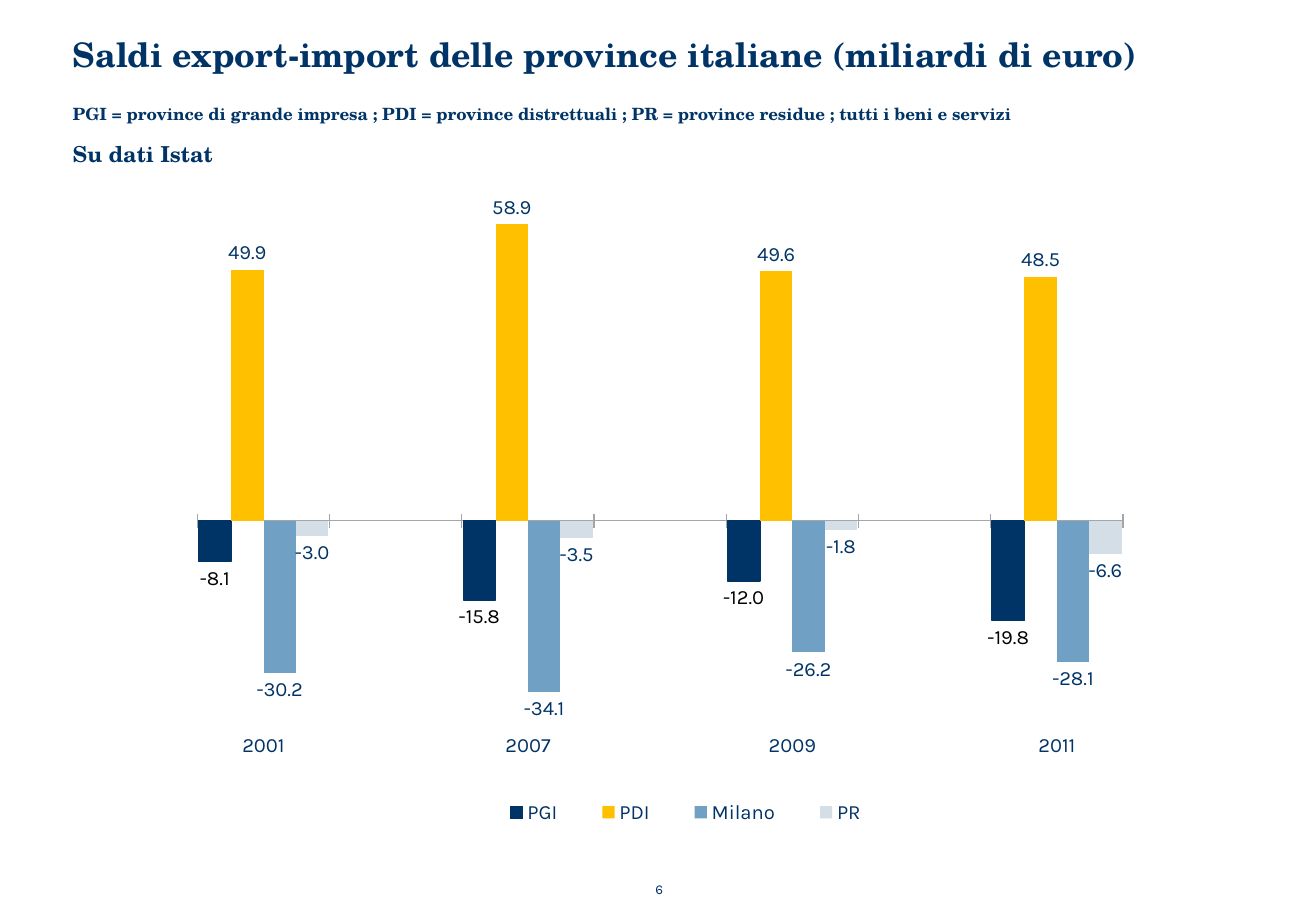
from lxml.etree import SubElement
from pptx import Presentation
from pptx.chart.data import CategoryChartData
from pptx.dml.color import RGBColor
from pptx.enum.chart import (XL_CHART_TYPE, XL_LABEL_POSITION, XL_LEGEND_POSITION,
                             XL_TICK_LABEL_POSITION, XL_TICK_MARK)
from pptx.enum.text import MSO_ANCHOR, MSO_AUTO_SIZE, PP_ALIGN
from pptx.oxml.ns import qn
from pptx.util import Inches, Pt

NAVY = RGBColor(0x00, 0x33, 0x66)
GOLD = RGBColor(0xFF, 0xC0, 0x00)
BLUE = RGBColor(0x70, 0xA0, 0xC3)
PALE = RGBColor(0xD3, 0xDE, 0xE6)
GREY = RGBColor(0xA6, 0xA6, 0xA6)
BLACK = RGBColor(0x00, 0x00, 0x00)
SERIF = "TeX Gyre Schola"
SANS = "Karla"

YEARS = ["2001", "2007", "2009", "2011"]
BALANCES = [
    ("PGI", [-8.1, -15.8, -12.0, -19.8], NAVY, BLACK),
    ("PDI", [49.9, 58.9, 49.6, 48.5], GOLD, NAVY),
    ("Milano", [-30.2, -34.1, -26.2, -28.1], BLUE, NAVY),
    ("PR", [-3.0, -3.5, -1.8, -6.6], PALE, NAVY),
]


def set_font(font, name, size, color=NAVY, bold=False):
    font.name = name
    font.size = Pt(size)
    font.color.rgb = color
    font.bold = bold


def write_line(box, place, text, name, size, bold=True, anchor=MSO_ANCHOR.TOP,
               align=PP_ALIGN.LEFT, wrap=True):
    """Place a box and fill it with one formatted paragraph."""
    box.left, box.top, box.width, box.height = (Inches(n) for n in place)
    frame = box.text_frame
    frame.text = text
    frame.word_wrap = wrap
    frame.auto_size = MSO_AUTO_SIZE.NONE
    frame.vertical_anchor = anchor
    frame.margin_left = frame.margin_right = Inches(0.1)
    frame.margin_top = frame.margin_bottom = Inches(0.05)
    paragraph = frame.paragraphs[0]
    paragraph.alignment = align
    set_font(paragraph.font, name, size, bold=bold)


def add_line(slide, place, *text_and_font, **options):
    box = slide.shapes.add_textbox(*(Inches(n) for n in place))
    write_line(box, place, *text_and_font, **options)


def spaced(items, gap):
    """Put a gap between neighbouring items, so that the years stand apart."""
    return [entry for item in items for entry in (item, gap)][:-1]


def set_layout(element, position, x, y, w, h, inner=False):
    """Fix the place of a chart part as fractions of the chart."""
    for old in element.findall(qn("c:layout")):
        element.remove(old)
    layout = element.makeelement(qn("c:layout"))
    element.insert(position, layout)
    manual = SubElement(layout, qn("c:manualLayout"))
    settings = [("layoutTarget", "inner")] if inner else []
    settings += [("xMode", "edge"), ("yMode", "edge"),
                 ("x", x), ("y", y), ("w", w), ("h", h)]
    for tag, value in settings:
        SubElement(manual, qn(f"c:{tag}")).set("val", str(value))


def format_axes(chart):
    years = chart.category_axis
    years.tick_label_position = XL_TICK_LABEL_POSITION.LOW
    years.major_tick_mark = XL_TICK_MARK.CROSS
    years.has_major_gridlines = False
    years.format.line.color.rgb = GREY
    years.format.line.width = Pt(0.75)
    balance = chart.value_axis
    balance.minimum_scale = -40
    balance.maximum_scale = 60
    balance.has_major_gridlines = False
    balance.visible = False


def format_series(series, color, label_color):
    series.invert_if_negative = False
    series.format.fill.solid()
    series.format.fill.fore_color.rgb = color
    if color == NAVY:
        series.format.line.color.rgb = NAVY
        series.format.line.width = Pt(0.75)
    labels = series.data_labels
    labels.show_value = True
    labels.position = XL_LABEL_POSITION.OUTSIDE_END
    labels.number_format = "#,##0.0"
    labels.number_format_is_linked = False
    set_font(labels.font, SANS, 12, label_color)


def add_balance_chart(slide):
    data = CategoryChartData(number_format="#,##0.0")
    data.categories = spaced(YEARS, " ")
    for name, values, _, _ in BALANCES:
        data.add_series(name, spaced(values, None))
    chart = slide.shapes.add_chart(
        XL_CHART_TYPE.COLUMN_CLUSTERED, Inches(1.29), Inches(1.59),
        Inches(8.37), Inches(5.31), data).chart
    set_font(chart.font, SANS, 12)
    chart.has_title = False
    format_axes(chart)

    plot = chart.plots[0]
    plot.gap_width = 8
    plot.overlap = 0
    plot.vary_by_categories = False
    for series, (_, _, color, label_color) in zip(plot.series, BALANCES):
        format_series(series, color, label_color)

    chart.has_legend = True
    legend = chart.legend
    legend.position = XL_LEGEND_POSITION.BOTTOM
    legend.include_in_layout = False
    set_font(legend.font, SANS, 12)

    chart_space = chart.element
    set_layout(chart_space.find(".//" + qn("c:plotArea")), 0,
               0.04, 0.04, 0.91, 0.78, inner=True)
    set_layout(chart_space.find(".//" + qn("c:legend")), 1,
               0.31, 0.93, 0.42, 0.06)


def main():
    deck = Presentation()
    deck.slide_width = Inches(10.83)
    deck.slide_height = Inches(7.5)
    slide = deck.slides.add_slide(deck.slide_layouts[5])
    write_line(slide.shapes.title, (0.5, 0.23, 9.84, 0.52),
               "Saldi export-import delle province italiane (miliardi di euro)",
               SERIF, 20)
    add_line(slide, (0.5, 0.78, 9.84, 0.31),
             "PGI = province di grande impresa ; PDI = province distrettuali ; "
             "PR = province residue ; tutti i beni e servizi",
             SERIF, 10, anchor=MSO_ANCHOR.MIDDLE)
    add_line(slide, (0.5, 1.11, 4.72, 0.45), "Su dati Istat", SERIF, 13)
    add_balance_chart(slide)
    add_line(slide, (5.24, 7.15, 0.37, 0.34), "6", SANS, 8, bold=False,
             anchor=MSO_ANCHOR.MIDDLE, align=PP_ALIGN.CENTER, wrap=False)
    deck.save("out.pptx")


if __name__ == "__main__":
    main()
